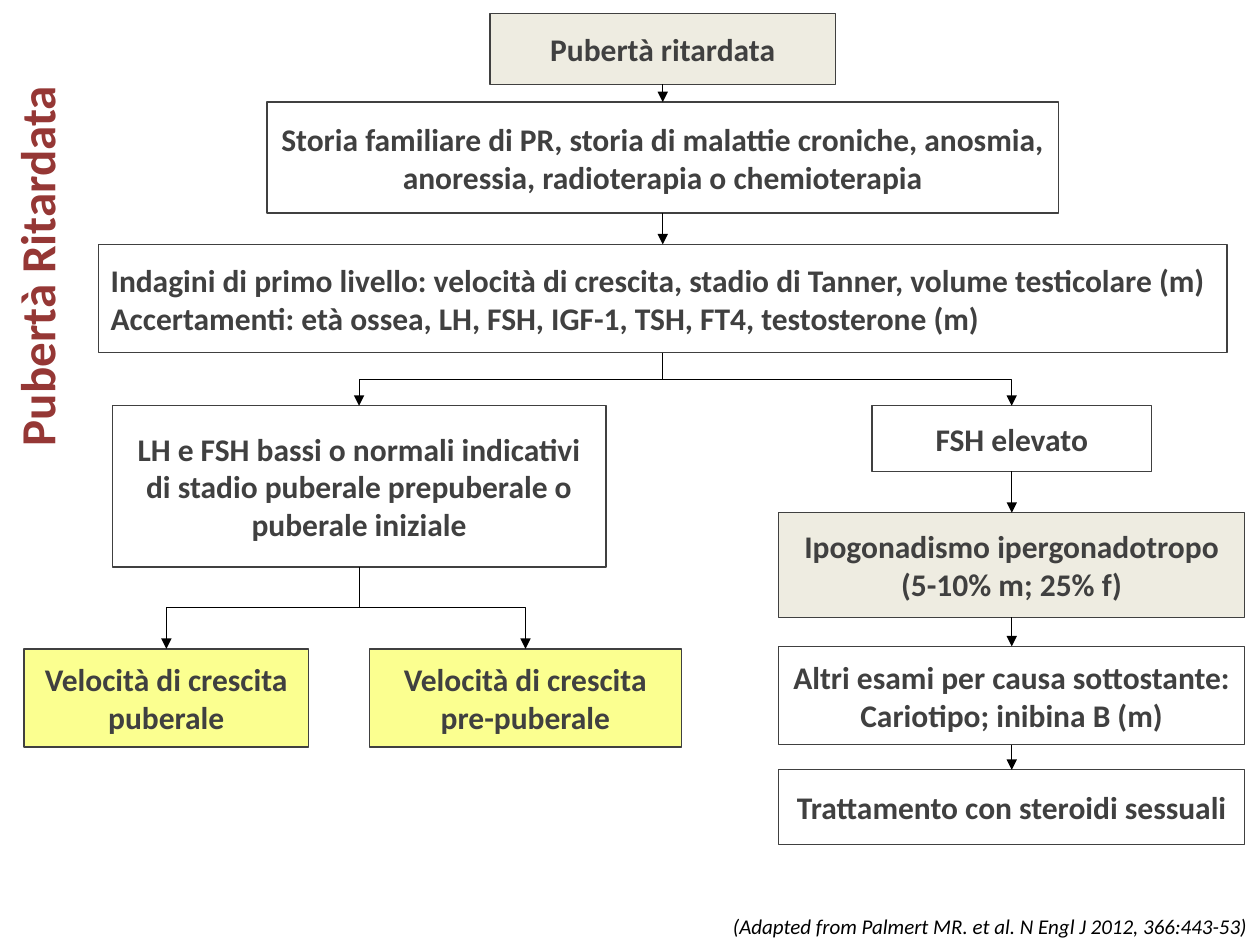
from pptx import Presentation
from pptx.dml.color import RGBColor
from pptx.enum.shapes import MSO_CONNECTOR as Connector, MSO_SHAPE as Shape
from pptx.enum.text import MSO_ANCHOR as Anchor, MSO_AUTO_SIZE as AutoSize, PP_ALIGN as Align
from pptx.oxml.ns import qn
from pptx.util import Inches, Pt
from lxml.etree import SubElement

COLORS = {"text": "404040", "title": "953735", "black": "000000",
          "beige": "EEECE1", "white": "FFFFFF", "yellow": "FBFF90"}
BOX_FONT = {"name": "Calibri", "size": Pt(18), "bold": True}
TITLE_FONT = {"name": "Calibri", "size": Pt(28), "bold": True}
SOURCE_FONT = {"name": "Calibri", "size": Pt(12), "italic": True}
BOTTOM, TOP = 2, 0


def color(name):
    return RGBColor.from_string(COLORS[name])


def set_attributes(target, values):
    for name, value in values.items():
        setattr(target, name, value)


def write(shape, lines, font, font_color, align, **frame_values):
    frame = shape.text_frame
    frame.text = "\n".join(lines)
    set_attributes(frame, frame_values)
    for paragraph in frame.paragraphs:
        paragraph.alignment = align
        for run in paragraph.runs:
            set_attributes(run.font, font)
            run.font.color.rgb = color(font_color)


def add_box(slide, left, top, width, height, *lines, fill="white", align=Align.CENTER):
    box = slide.shapes.add_shape(Shape.RECTANGLE, Inches(left), Inches(top),
                                 Inches(width), Inches(height))
    box.shadow.inherit = False
    box.fill.solid()
    box.fill.fore_color.rgb = color(fill)
    box.line.color.rgb = color("text")
    box.line.width = Pt(0.75)
    write(box, lines, BOX_FONT, "text", align, word_wrap=True, vertical_anchor=Anchor.MIDDLE)
    return box


def style_arrow(arrow):
    arrow.line.color.rgb = color("black")
    arrow.line.width = Pt(0.5)
    SubElement(arrow.line._get_or_add_ln(), qn("a:tailEnd"), type="triangle")
    SubElement(arrow._element.spPr, qn("a:effectLst"))


def add_arrow(slide, upper, lower):
    arrow = slide.shapes.add_connector(Connector.STRAIGHT, 0, 0, 0, 0)
    arrow.begin_connect(upper, BOTTOM)
    arrow.end_connect(lower, TOP)
    style_arrow(arrow)


def add_branch(slide, upper, lower):
    """Elbow that leaves downwards: a quarter turn about its own centre."""
    start_x, start_y = upper.left + upper.width // 2, upper.top + upper.height
    end_x, end_y = lower.left + lower.width // 2, lower.top
    drop, span = end_y - start_y, abs(end_x - start_x)
    left = (start_x + end_x - drop) // 2
    top = (start_y + end_y - span) // 2
    branch = slide.shapes.add_connector(Connector.ELBOW, left, top, left + drop, top + span)
    transform = branch._element.spPr.find(qn("a:xfrm"))
    turn = 90
    if end_x > start_x:
        turn = 270
        transform.set("flipH", "1")
    transform.set("rot", str(turn * 60000))
    style_arrow(branch)


def add_title(slide, left, top, width, height):
    title = slide.shapes.title
    set_attributes(title, {"left": Inches(left), "top": Inches(top), "width": Inches(width),
                           "height": Inches(height), "rotation": 270})
    write(title, ["Pubertà Ritardata"], TITLE_FONT, "title", Align.LEFT,
          word_wrap=False, vertical_anchor=Anchor.TOP, auto_size=AutoSize.NONE)


def add_assessment(slide, left, top, width):
    """Centred column of first steps; returns its last box."""
    def centred(offset, box_width, height, *lines, **options):
        return add_box(slide, left + (width - box_width) / 2, top + offset,
                       box_width, height, *lines, **options)

    start = centred(0, 2.74, 0.56, "Pubertà ritardata", fill="beige")
    history = centred(0.7, 6.28, 0.88, "Storia familiare di PR, storia di malattie croniche, "
                      "anosmia, anoressia, radioterapia o chemioterapia")
    tests = centred(1.83, width, 0.86,
                    "Indagini di primo livello: velocità di crescita, stadio di Tanner, "
                    "volume testicolare (m)",
                    "Accertamenti: età ossea, LH, FSH, IGF-1, TSH, FT4, testosterone (m)",
                    align=Align.LEFT)
    add_arrow(slide, start, history)
    add_arrow(slide, history, tests)
    return tests


def add_low_fsh(slide, left, top):
    """Left branch with its two outcomes; returns its first box."""
    finding = add_box(slide, left + 0.7, top, 3.92, 1.28, "LH e FSH bassi o normali indicativi "
                      "di stadio puberale prepuberale o puberale iniziale")
    outcomes = [(0, 2.26, "puberale"), (2.74, 2.48, "pre-puberale")]
    for offset, width, stage in outcomes:
        outcome = add_box(slide, left + offset, top + 1.93, width, 0.78,
                          f"Velocità di crescita {stage}", fill="yellow")
        add_branch(slide, finding, outcome)
    return finding


def add_high_fsh(slide, left, top, width):
    """Right branch, a chain of steps; returns its first box."""
    finding_width = 2.22
    finding = add_box(slide, left + (width - finding_width) / 2, top, finding_width, 0.52,
                      "FSH elevato")
    steps = [(0.85, 0.83, "Ipogonadismo ipergonadotropo (5-10% m; 25% f)", "beige"),
             (1.91, 0.78, "Altri esami per causa sottostante: Cariotipo; inibina B (m)", "white"),
             (2.89, 0.59, "Trattamento con steroidi sessuali", "white")]
    previous = finding
    for offset, height, text, fill in steps:
        step = add_box(slide, left, top + offset, width, height, text, fill=fill)
        add_arrow(slide, previous, step)
        previous = step
    return finding


def add_source(slide, left, top, width, height):
    source = slide.shapes.add_textbox(Inches(left), Inches(top), Inches(width), Inches(height))
    write(source, ["(Adapted from Palmert MR. et al. N Engl J 2012, 366:443-53)"],
          SOURCE_FONT, "black", Align.RIGHT, word_wrap=False)


def main():
    presentation = Presentation()
    presentation.slide_width, presentation.slide_height = Inches(10), Inches(7.5)
    slide = presentation.slides.add_slide(presentation.slide_layouts[5])

    add_title(slide, -1.27, 1.8, 3.11, 0.57)
    tests = add_assessment(slide, 0.78, 0.11, 8.96)
    for finding in (add_low_fsh(slide, 0.19, 3.22), add_high_fsh(slide, 6.18, 3.22, 3.7)):
        add_branch(slide, tests, finding)
    add_source(slide, 5.63, 7.2, 4.37, 0.3)

    presentation.save("out.pptx")


if __name__ == "__main__":
    main()
